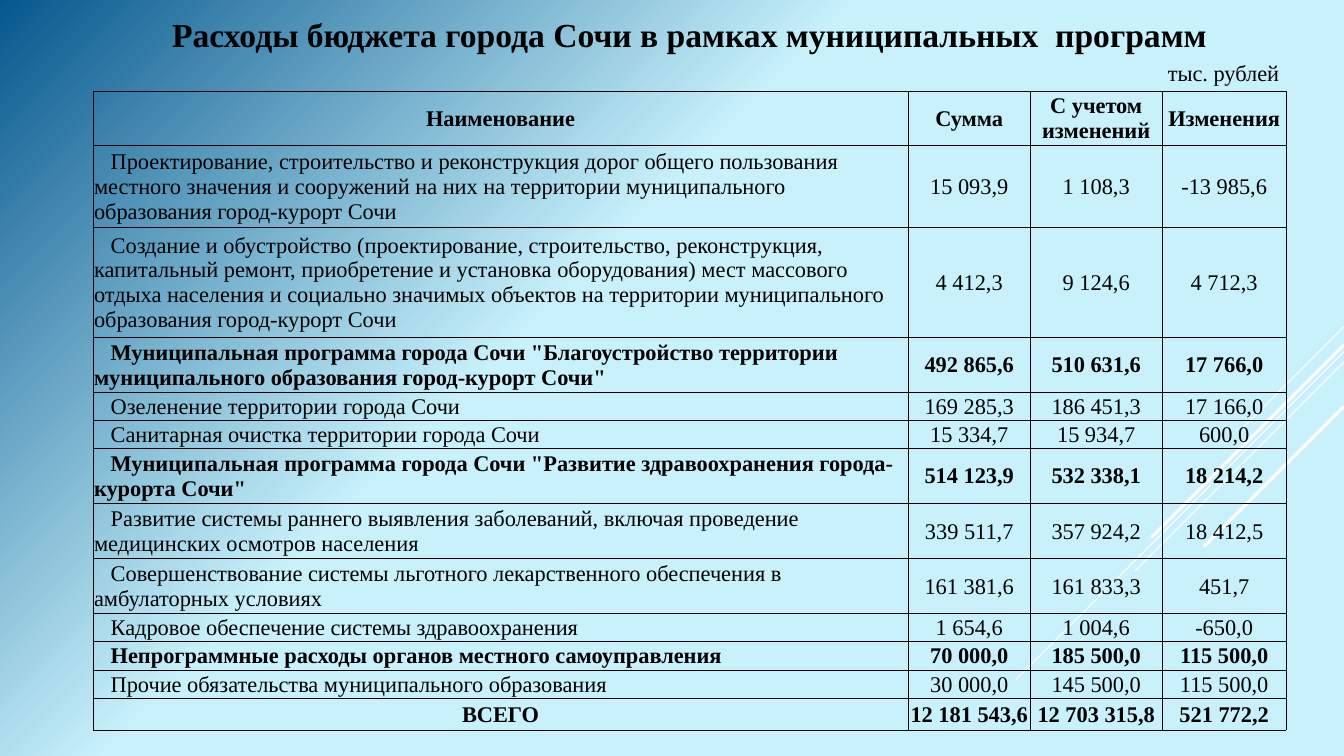
from lxml.etree import SubElement
from pptx import Presentation
from pptx.dml.color import RGBColor
from pptx.enum.shapes import MSO_CONNECTOR
from pptx.enum.text import MSO_ANCHOR, MSO_AUTO_SIZE, PP_ALIGN
from pptx.oxml.ns import qn
from pptx.util import Cm, Pt

COLUMN_WIDTHS = [20.55, 3.07, 3.33, 3.12]
HEADER = ["Наименование", "Сумма", "С учетом изменений", "Изменения"]
HEADER_HEIGHT, TOTAL_HEIGHT = 1.36, 0.81
LINE_HEIGHTS = {1: 0.7, 2: 1.39, 3: 2.05, 4: 2.76}

# Lines of text in the name, bold, name, then the three amounts
EXPENSES = [
    (3, False, "Проектирование, строительство и реконструкция дорог общего пользования местного значения "
     "и сооружений на них на территории муниципального образования город-курорт Сочи",
     "15 093,9", "1 108,3", "-13 985,6"),
    (4, False, "Создание и обустройство (проектирование, строительство, реконструкция, капитальный ремонт, "
     "приобретение и установка оборудования) мест массового отдыха населения и социально значимых "
     "объектов на территории муниципального образования город-курорт Сочи",
     "4 412,3", "9 124,6", "4 712,3"),
    (2, True, 'Муниципальная программа города Сочи "Благоустройство территории муниципального '
     'образования город-курорт Сочи"', "492 865,6", "510 631,6", "17 766,0"),
    (1, False, "Озеленение территории города Сочи", "169 285,3", "186 451,3", "17 166,0"),
    (1, False, "Санитарная очистка территории города Сочи", "15 334,7", "15 934,7", "600,0"),
    (2, True, 'Муниципальная программа города Сочи "Развитие здравоохранения города-курорта Сочи"',
     "514 123,9", "532 338,1", "18 214,2"),
    (2, False, "Развитие системы раннего выявления заболеваний, включая проведение медицинских "
     "осмотров населения", "339 511,7", "357 924,2", "18 412,5"),
    (2, False, "Совершенствование системы льготного лекарственного обеспечения в амбулаторных условиях",
     "161 381,6", "161 833,3", "451,7"),
    (1, False, "Кадровое обеспечение системы здравоохранения", "1 654,6", "1 004,6", "-650,0"),
    (1, True, "Непрограммные расходы органов местного самоуправления",
     "70 000,0", "185 500,0", "115 500,0"),
    (1, False, "Прочие обязательства муниципального образования", "30 000,0", "145 500,0", "115 500,0"),
]
TOTAL = ["ВСЕГО", "12 181 543,6", "12 703 315,8", "521 772,2"]

# Start height at the right edge, horizontal run, line width
DIAGONALS = [(8.23, 2.54, 0.75), (8.86, 8.28, 0.75), (9.12, 5.27, 0.75),
             (8.69, 4.85, 2.25), (10.24, 3.53, 2.25)]


def color(code):
    return RGBColor.from_string(code)


def write(frame, text, size=16, bold=False, align=PP_ALIGN.LEFT, indent=0,
          font="Times New Roman", ink="000000"):
    para = frame.paragraphs[0]
    para.alignment = align
    para.line_spacing = 1.0
    if indent:
        properties = para._p.get_or_add_pPr()
        properties.set("marL", "0")
        properties.set("indent", str(Cm(indent)))
    span = para.add_run()
    span.text = text
    span.font.name = font
    span.font.size = Pt(size)
    span.font.bold = bold
    span.font.color.rgb = color(ink)


class BudgetPage:
    """Style of the deck and the slide being filled."""
    ink, light, dark, streak = "000000", "C8F1FB", "06588E", "FFFFFF"

    def __init__(self, deck):
        self.deck = deck
        self.page = deck.slides.add_slide(deck.slide_layouts[5])

    def background(self):
        """Radial gradient centred on the bottom right corner."""
        fill = self.page.background.fill
        fill.gradient()
        for stop, code, position in zip(fill.gradient_stops, (self.light, self.dark), (0.59, 1)):
            stop.color.rgb = color(code)
            stop.position = position
        gradient = self.page.background._cSld.find(".//" + qn("a:gradFill"))
        gradient.remove(gradient.find(qn("a:lin")))
        circle = SubElement(gradient, qn("a:path"), {"path": "circle"})
        SubElement(circle, qn("a:fillToRect"), {"l": "100000", "t": "100000"})

    def diagonal(self, top, run, width):
        right = self.deck.slide_width
        line = self.page.shapes.add_connector(
            MSO_CONNECTOR.STRAIGHT, right, Cm(top), right - Cm(run), Cm(top + run))
        line.line.color.rgb = color(self.streak)
        line.line.width = Pt(width)
        SubElement(line._element.spPr, qn("a:effectLst"))

    def title(self, text, left, top, width, height):
        box = self.page.shapes.title
        box.left, box.top, box.width, box.height = Cm(left), Cm(top), Cm(width), Cm(height)
        box.text_frame.auto_size = MSO_AUTO_SIZE.SHAPE_TO_FIT_TEXT
        box.text_frame.vertical_anchor = MSO_ANCHOR.TOP
        write(box.text_frame, text, size=24, bold=True, align=PP_ALIGN.CENTER)

    def label(self, text, left, top, width, height):
        box = self.page.shapes.add_textbox(Cm(left), Cm(top), Cm(width), Cm(height))
        box.text_frame.word_wrap = True
        box.text_frame.auto_size = MSO_AUTO_SIZE.SHAPE_TO_FIT_TEXT
        write(box.text_frame, text)

    def table(self, left, top, widths, heights):
        frame = self.page.shapes.add_table(
            len(heights), len(widths), Cm(left), Cm(top), Cm(sum(widths)), Cm(sum(heights)))
        table = frame.table
        table.first_row = table.horz_banding = False
        for column, width in zip(table.columns, widths):
            column.width = Cm(width)
        for row, height in zip(table.rows, heights):
            row.height = Cm(height)
        return table

    def row(self, cells, texts, bold, margin=0.03, name_format=None):
        centred = {"align": PP_ALIGN.CENTER}
        formats = [name_format or centred] + [centred] * (len(texts) - 1)
        for cell, text, text_format in zip(cells, texts, formats):
            cell.margin_left = cell.margin_right = cell.margin_top = Cm(margin)
            cell.margin_bottom = 0
            cell.vertical_anchor = MSO_ANCHOR.MIDDLE
            write(cell.text_frame, text, bold=bold, **text_format)
            self.borders(cell)
            cell.fill.background()

    def borders(self, cell):
        properties = cell._tc.get_or_add_tcPr()
        for side in ("a:lnL", "a:lnR", "a:lnT", "a:lnB"):
            line = SubElement(properties, qn(side), {"w": str(Pt(0.5))})
            solid = SubElement(line, qn("a:solidFill"))
            SubElement(solid, qn("a:srgbClr"), {"val": self.ink})


def main():
    deck = Presentation()
    deck.slide_width, deck.slide_height = Cm(33.87), Cm(19.05)
    budget = BudgetPage(deck)
    budget.background()
    for diagonal in DIAGONALS:
        budget.diagonal(*diagonal)
    budget.title("Расходы бюджета города Сочи в рамках муниципальных  программ", 2.34, 0.23, 30.07, 1.27)

    heights = [HEADER_HEIGHT, *(LINE_HEIGHTS[lines] for lines, *_ in EXPENSES), TOTAL_HEIGHT]
    table = budget.table(2.34, 2.31, COLUMN_WIDTHS, heights)
    header, *expense_rows, total = table.rows
    budget.row(header.cells, HEADER, bold=True, margin=0)
    for row, (_, bold, *texts) in zip(expense_rows, EXPENSES):
        budget.row(row.cells, texts, bold, name_format={"indent": 0.42})
    budget.row(total.cells, TOTAL, bold=True)

    budget.label("тыс. рублей", 29.18, 1.37, 3.84, 0.94)
    deck.save("out.pptx")


if __name__ == "__main__":
    main()
